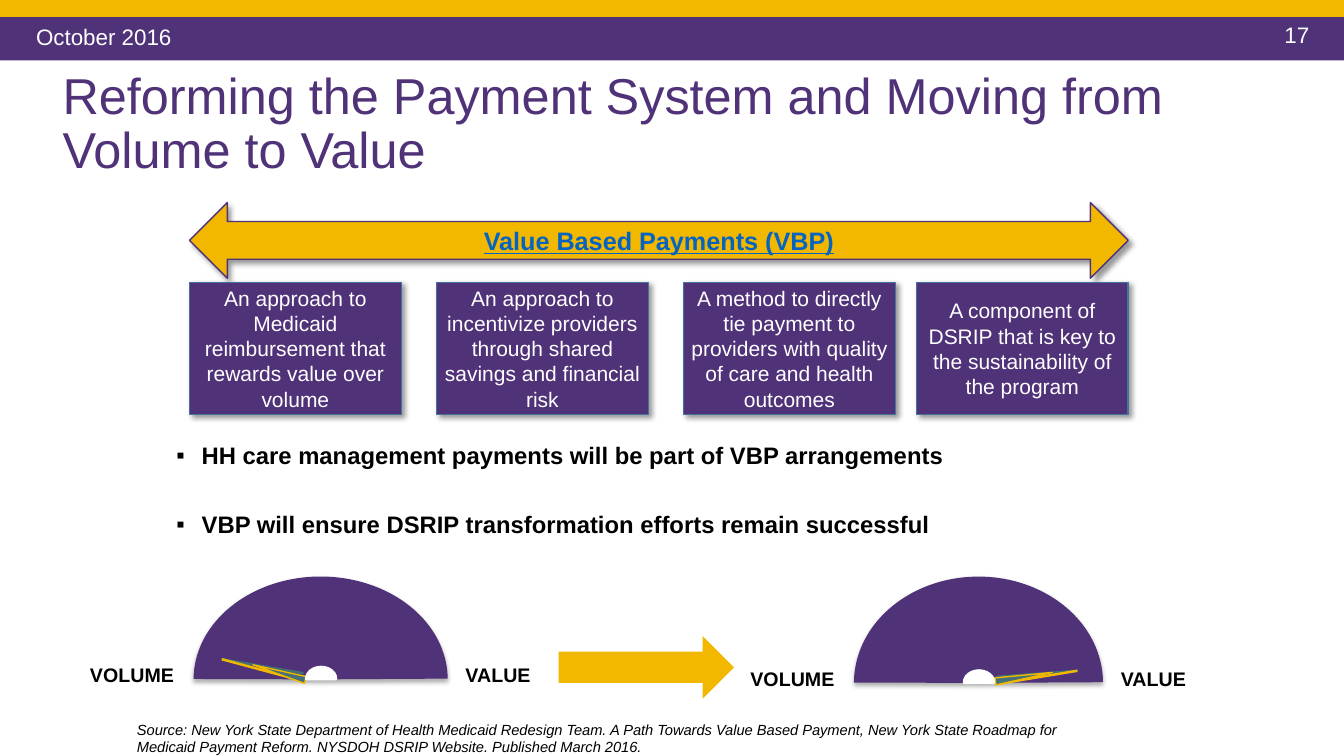
from lxml.etree import SubElement
from pptx import Presentation
from pptx.dml.color import RGBColor
from pptx.enum.shapes import MSO_CONNECTOR, MSO_SHAPE
from pptx.enum.text import MSO_ANCHOR, MSO_AUTO_SIZE, PP_ALIGN
from pptx.oxml.ns import qn
from pptx.util import Inches, Pt

PURPLE, GOLD, WHITE, BLACK = "503278", "F2B800", "FFFFFF", "000000"
TEAL, EDGE, LINK = "437175", "43739E", "0563C1"
CARDS = [
    (0, "An approach to Medicaid reimbursement that rewards value over volume"),
    (2.45, "An approach to incentivize providers through shared savings and financial risk"),
    (4.9, "A method to directly tie payment to providers with quality of care and health outcomes"),
    (7.21, "A component of DSRIP that is key to the sustainability of the program"),
]
POINTS = [
    "HH care management payments will be part of VBP arrangements",
    "VBP will ensure DSRIP transformation efforts remain successful",
]
SOURCE = ("Source: New York State Department of Health Medicaid Redesign Team. "
          "A Path Towards Value Based Payment, New York State Roadmap for "
          "Medicaid Payment Reform. NYSDOH DSRIP Website. Published March 2016.")


def rgb(code):
    return RGBColor.from_string(code)


def style(para, size, color, bold=False, italic=False, under=False, align=PP_ALIGN.LEFT):
    para.alignment = align
    font = para.font
    font.name, font.size, font.bold, font.italic = "Arial", Pt(size), bold, italic
    font.underline = under
    font.color.rgb = rgb(color)


def place(shape, x, y, w, h):
    shape.left, shape.top = Inches(x), Inches(y)
    shape.width, shape.height = Inches(w), Inches(h)


def shadow(shape, alpha, blur, dist, angle):
    effects = shape.element.spPr.find(qn("a:effectLst"))
    outer = SubElement(effects, qn("a:outerShdw"), blurRad=str(Pt(blur)),
                       dist=str(Pt(dist)), dir=str(angle * 60000), rotWithShape="0")
    color = SubElement(outer, qn("a:srgbClr"), val=BLACK)
    SubElement(color, qn("a:alpha"), val=str(alpha * 1000))


def draw(slide, kind, x, y, w, h, fill, line=None, width=1.0):
    shape = slide.shapes.add_shape(kind, Inches(x), Inches(y), Inches(w), Inches(h))
    shape.shadow.inherit = False
    shape.fill.solid()
    shape.fill.fore_color.rgb = rgb(fill)
    if line:
        shape.line.color.rgb = rgb(line)
        shape.line.width = Pt(width)
    else:
        shape.line.fill.background()
    return shape


def label(slide, x, y, w, h, text, size, color, wrap=True, anchor=MSO_ANCHOR.TOP, **look):
    frame = slide.shapes.add_textbox(Inches(x), Inches(y), Inches(w), Inches(h)).text_frame
    frame.word_wrap = wrap
    frame.vertical_anchor = anchor
    frame.text = text
    style(frame.paragraphs[0], size, color, **look)


def header(slide, x, y, w):
    draw(slide, MSO_SHAPE.RECTANGLE, x, y, w, 0.17, GOLD)
    draw(slide, MSO_SHAPE.RECTANGLE, x, y + 0.17, w, 0.43, PURPLE)
    label(slide, x + w - 0.69, y + 0.16, 0.48, 0.37, "17", 16, WHITE, wrap=False)
    label(slide, x + 0.26, y + 0.16, 6, 0.4, "October 2016", 16, WHITE,
          anchor=MSO_ANCHOR.MIDDLE)


def heading(slide, x, y, w, h):
    title = slide.shapes.title
    place(title, x, y, w, h)
    frame = title.text_frame
    frame.text = "Reforming the Payment System and Moving from Volume to Value"
    frame.auto_size = MSO_AUTO_SIZE.NONE
    frame.vertical_anchor = MSO_ANCHOR.MIDDLE
    para = frame.paragraphs[0]
    para.line_spacing = 0.9
    style(para, 36, PURPLE)


def banner(slide, x, y, w):
    # Double arrow above the cards
    arrow = draw(slide, MSO_SHAPE.LEFT_RIGHT_ARROW, x, y, w, 0.75, GOLD, PURPLE)
    shadow(arrow, 40, 4, 3, 45)
    arrow.text_frame.text = "Value Based Payments (VBP)"
    style(arrow.text_frame.paragraphs[0], 18, LINK, bold=True, under=True,
          align=PP_ALIGN.CENTER)
    # Cards
    for dx, text in CARDS:
        card = draw(slide, MSO_SHAPE.RECTANGLE, x + dx, y + 0.79, 2.1, 1.31, PURPLE, EDGE)
        shadow(card, 40, 4, 3, 45)
        frame = card.text_frame
        frame.margin_left = frame.margin_right = frame.margin_top = frame.margin_bottom = 0
        frame.word_wrap = True
        frame.text = text
        style(frame.paragraphs[0], 15, WHITE, align=PP_ALIGN.CENTER)


def points(slide, x, y, w, h):
    body = slide.placeholders[1]
    place(body, x, y, w, h)
    frame = body.text_frame
    frame.auto_size = MSO_AUTO_SIZE.NONE
    for i, text in enumerate(POINTS):
        para = frame.add_paragraph() if i else frame.paragraphs[0]
        para.text = text
        props = para._p.get_or_add_pPr()
        props.set("marL", str(Inches(0.25)))
        props.set("indent", str(-Inches(0.25)))
        SubElement(props, qn("a:buFont"), typeface="Arial")
        SubElement(props, qn("a:buChar"), char="▪")
        para.line_spacing = 0.9
        para.space_before = Pt(31 if i else 0)
        style(para, 17, BLACK, bold=True)


def sector(slide, x, y, w, h, start, end, color, line=None):
    pie = draw(slide, MSO_SHAPE.PIE, x, y, w, h, color, line, 2.25)
    pie.adjustments[0], pie.adjustments[1] = start, end
    return pie


def flip(shape):
    shape.element.spPr.get_or_add_xfrm().set("flipH", "1")


def gauge(slide, x, y, w, h, needle):
    cx, cy = x + w / 2, y + h / 2
    # End labels
    for left, text in ((x - 1.24, "VOLUME"), (x + w - 0.1, "VALUE")):
        label(slide, left, cy - 0.21, 1.2 if text == "VALUE" else 1.26, 0.34,
              text, 14, BLACK, bold=True, align=PP_ALIGN.CENTER)
    # Dial
    dial = sector(slide, x, y, w, h, 108.1, 215.8, PURPLE)
    shadow(dial, 32, 3.5, 2.2, 90)
    # Needle: two edges and a thin triangle
    for color, (ax, ay), (bx, by) in needle["edges"]:
        edge = slide.shapes.add_connector(
            MSO_CONNECTOR.STRAIGHT, Inches(cx + ax), Inches(cy + ay),
            Inches(cx + bx), Inches(cy + by))
        edge.line.color.rgb = rgb(color)
        edge.line.width = Pt(1.75)
        SubElement(edge.element.spPr, qn("a:effectLst"))
    dx, dy = needle["mid"]
    size = needle["size"]
    tip = draw(slide, MSO_SHAPE.ISOSCELES_TRIANGLE, cx + dx - 0.035, cy + dy - size / 2,
               0.07, size, TEAL, GOLD)
    tip.adjustments[0] = 0.47
    tip.rotation = needle["turn"]
    if needle["flip"]:
        flip(tip)
    # Hub
    flip(sector(slide, cx - 0.14, cy - 0.12, 0.29, 0.23, 108, 0.18, WHITE, WHITE))


LOW = {"edges": [(TEAL, (-0.17, -0.06), (-0.98, -0.2)), (GOLD, (-0.2, 0.01), (-0.98, -0.2))],
       "mid": (-0.41, -0.07), "size": 0.54, "turn": 286.4, "flip": False}
HIGH = {"edges": [(TEAL, (0.18, -0.06), (0.99, -0.12)), (GOLD, (0.19, 0.01), (0.98, -0.12))],
        "mid": (0.45, -0.06), "size": 0.57, "turn": 80.8, "flip": True}


def main():
    deck = Presentation()
    deck.slide_width, deck.slide_height = Inches(13.33), Inches(7.5)
    slide = deck.slides.add_slide(deck.slide_layouts[1])
    header(slide, 0, 0, 13.33)
    heading(slide, 0.52, 0.72, 12.49, 1.04)
    banner(slide, 1.88, 2.01, 9.31)
    points(slide, 1.65, 4.35, 11.04, 1.4)
    draw(slide, MSO_SHAPE.RIGHT_ARROW, 5.54, 6.31, 1.74, 0.62, GOLD)
    gauge(slide, 1.92, 5.72, 2.52, 2.04, LOW)
    gauge(slide, 8.47, 5.72, 2.47, 2.11, HIGH)
    label(slide, 1.26, 7.1, 9.42, 0.45, SOURCE, 10.5, BLACK, italic=True)
    deck.save("out.pptx")


if __name__ == "__main__":
    main()
